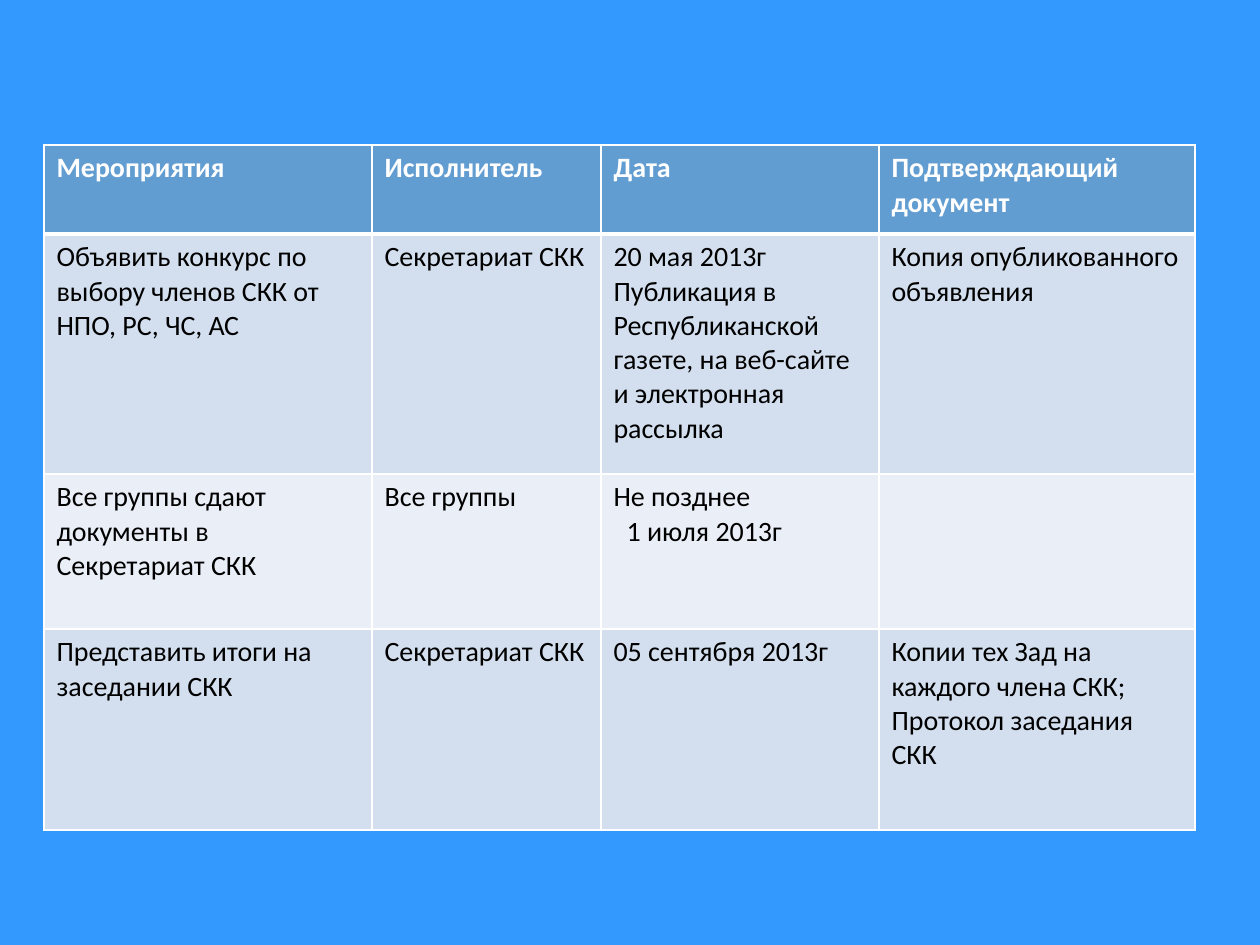
"""Build a slide with the schedule for selecting committee members."""
from lxml import etree
from pptx import Presentation
from pptx.dml.color import RGBColor
from pptx.oxml.ns import qn
from pptx.util import Pt

HEADER = ["Мероприятия", "Исполнитель", "Дата", "Подтверждающий документ"]
STEPS = [
    ["Объявить конкурс по выбору членов СКК от НПО, РС, ЧС, АС",
     "Секретариат СКК",
     "20 мая 2013г Публикация в Республиканской газете, на веб-сайте и электронная рассылка",
     "Копия опубликованного объявления"],
    ["Все группы сдают документы в Секретариат СКК",
     "Все группы",
     "Не позднее\n1 июля 2013г",
     ""],
    ["Представить итоги на заседании СКК",
     "Секретариат СКК",
     "05 сентября 2013г",
     "Копии тех Зад на каждого члена СКК; Протокол заседания СКК"],
]
COLUMN_WIDTHS = [328, 229, 278, 316]
ROW_HEIGHTS = [89, 240, 155, 201]
TABLE_LEFT, TABLE_TOP = 44, 145
CONTINUATION_INDENT = 13

BACKGROUND = RGBColor(0x33, 0x99, 0xFF)
HEADER_FILL = RGBColor(0x62, 0x9D, 0xD1)
BAND_FILLS = [RGBColor(0xD3, 0xDF, 0xEE), RGBColor(0xEA, 0xEF, 0xF7)]
WHITE = RGBColor(0xFF, 0xFF, 0xFF)
BLACK = RGBColor(0, 0, 0)

BLANK_LAYOUT = 6


def px(length):
    """Turn pixels into EMU."""
    return round(length * 914400 / 126)


def write_text(cell, text, size=16, color=BLACK, bold=False, font="Calibri"):
    """Fill a cell with one paragraph a line, indenting the later ones."""
    cell.text = text
    for index, paragraph in enumerate(cell.text_frame.paragraphs):
        paragraph.font.size = Pt(size)
        if index:
            paragraph._p.get_or_add_pPr().set("marL", str(px(CONTINUATION_INDENT)))
        for run in paragraph.runs:
            run.font.name = font
            run.font.size = Pt(size)
            run.font.bold = bold
            run.font.color.rgb = color


def draw_borders(cell, top=1, bottom=1):
    """Give a cell white borders with widths in points."""
    properties = cell._tc.get_or_add_tcPr()
    for side, width in (("L", 1), ("R", 1), ("T", top), ("B", bottom)):
        line = etree.SubElement(properties, qn(f"a:ln{side}"), w=str(Pt(width)))
        fill = etree.SubElement(line, qn("a:solidFill"))
        etree.SubElement(fill, qn("a:srgbClr"), val=str(WHITE))


def main():
    """Build and save the slide."""
    deck = Presentation()
    deck.slide_width, deck.slide_height = px(1260), px(945)
    slide = deck.slides.add_slide(deck.slide_layouts[BLANK_LAYOUT])
    slide.background.fill.solid()
    slide.background.fill.fore_color.rgb = BACKGROUND

    rows = [HEADER] + STEPS
    schedule = slide.shapes.add_table(
        len(rows), len(HEADER), px(TABLE_LEFT), px(TABLE_TOP),
        px(sum(COLUMN_WIDTHS)), px(sum(ROW_HEIGHTS))).table
    for column, width in zip(schedule.columns, COLUMN_WIDTHS):
        column.width = px(width)
    for row, height in zip(schedule.rows, ROW_HEIGHTS):
        row.height = px(height)

    for row_index, texts in enumerate(rows):
        is_header = row_index == 0
        band = HEADER_FILL if is_header else BAND_FILLS[(row_index - 1) % 2]
        for column_index, text in enumerate(texts):
            cell = schedule.cell(row_index, column_index)
            write_text(cell, text, color=WHITE if is_header else BLACK, bold=is_header)
            draw_borders(cell, top=3 if row_index == 1 else 1, bottom=3 if is_header else 1)
            cell.fill.solid()
            cell.fill.fore_color.rgb = band

    deck.save("out.pptx")


if __name__ == "__main__":
    main()
